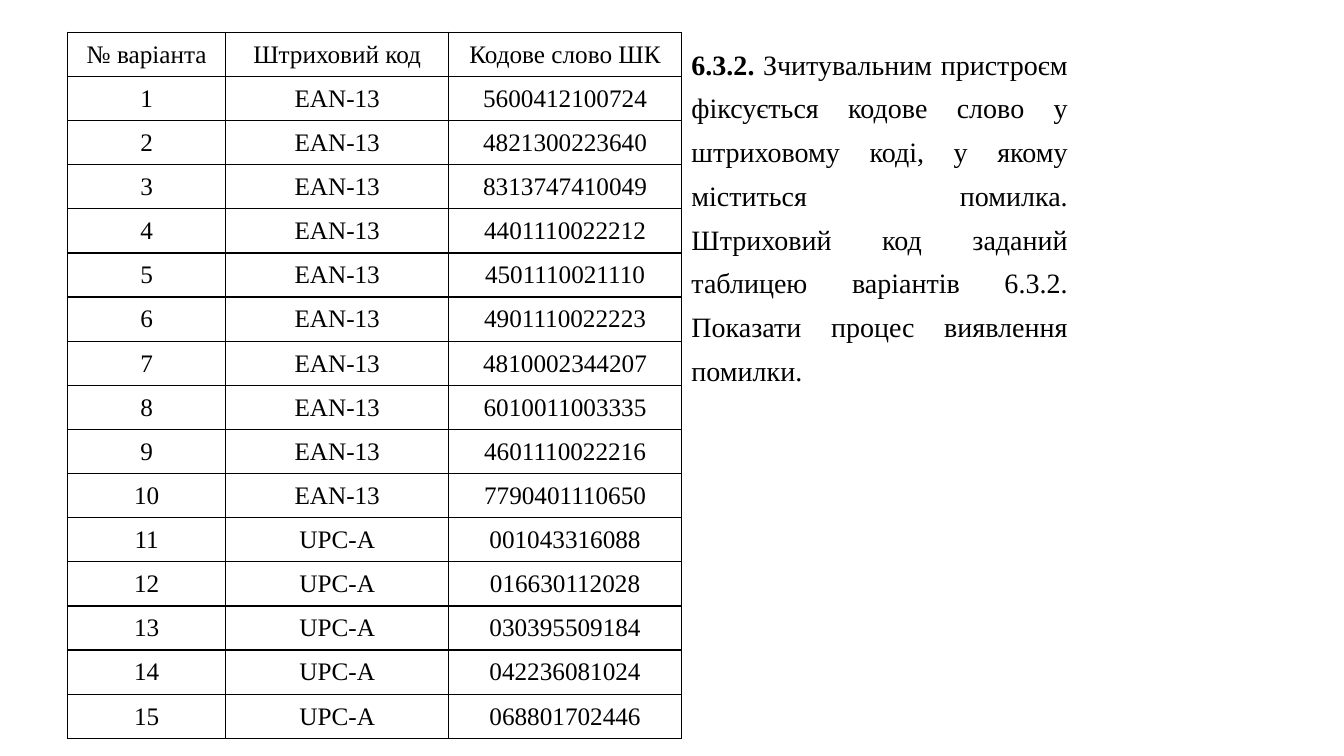
import pptx
import pptx.dml.color
import pptx.enum.text
import pptx.oxml
import pptx.oxml.ns
import pptx.util
from pptx.util import Inches

FONT = "Times New Roman"
BLACK = "000000"
WHITE = "FFFFFF"
ALIGN = pptx.enum.text.PP_ALIGN
HEADERS = ["№ варіанта", "Штриховий код", "Кодове слово ШК"]
CODE_WORDS = {
    "EAN-13": [
        "5600412100724", "4821300223640", "8313747410049", "4401110022212",
        "4501110021110", "4901110022223", "4810002344207", "6010011003335",
        "4601110022216", "7790401110650",
    ],
    "UPC-A": [
        "001043316088", "016630112028", "030395509184", "042236081024",
        "068801702446",
    ],
}
COLUMN_WIDTHS = [1.57, 2.21, 2.31]
ROW_HEIGHT = 7.01 / 16
TASK = (
    "Зчитувальним пристроєм фіксується кодове слово у штриховому коді, "
    "у якому міститься помилка. Штриховий код заданий таблицею варіантів "
    "6.3.2. Показати процес виявлення помилки."
)


def color(value):
    """Return the colour for a hex string."""
    return pptx.dml.color.RGBColor.from_string(value)


def add_text(paragraph, text, size=18, bold=False, align=ALIGN.CENTER, before=0):
    """Append a formatted run to a paragraph."""
    paragraph.alignment = align
    paragraph.line_spacing = 1.3
    paragraph.space_before = pptx.util.Pt(before)
    run = paragraph.add_run()
    run.text = text
    run.font.name = FONT
    run.font.size = pptx.util.Pt(size)
    run.font.bold = bold
    run.font.color.rgb = color(BLACK)


def set_borders(cell, value=BLACK, width=1):
    """Draw a solid border on all four sides of a cell."""
    properties = cell._tc.get_or_add_tcPr()
    for position, side in enumerate(("lnL", "lnR", "lnT", "lnB")):
        border = pptx.oxml.parse_xml(
            f'<a:{side} {pptx.oxml.ns.nsdecls("a")} w="{pptx.util.Pt(width)}">'
            f'<a:solidFill><a:srgbClr val="{value}"/></a:solidFill></a:{side}>'
        )
        properties.insert(position, border)


def add_variants_table(slide, rows):
    """Add the bordered table of variants."""
    table = slide.shapes.add_table(
        len(rows), len(COLUMN_WIDTHS), Inches(0.67), Inches(0.32),
        Inches(sum(COLUMN_WIDTHS)), Inches(ROW_HEIGHT * len(rows)),
    ).table
    table.first_row = False
    table.horz_banding = False
    for column, width in zip(table.columns, COLUMN_WIDTHS):
        column.width = Inches(width)
    for row, values in zip(table.rows, rows):
        row.height = Inches(ROW_HEIGHT)
        for cell, value in zip(row.cells, values):
            cell.margin_left = cell.margin_right = Inches(0.07)
            cell.margin_top = cell.margin_bottom = 0
            cell.fill.solid()
            cell.fill.fore_color.rgb = color(WHITE)
            set_borders(cell)
            add_text(cell.text_frame.paragraphs[0], value, before=2)


def add_task(slide):
    """Add the justified task statement."""
    box = slide.shapes.add_textbox(
        Inches(6.76), Inches(0.32), Inches(3.93), Inches(3.56)
    )
    frame = box.text_frame
    frame.word_wrap = True
    frame.auto_size = pptx.enum.text.MSO_AUTO_SIZE.SHAPE_TO_FIT_TEXT
    paragraph = frame.paragraphs[0]
    add_text(paragraph, "6.3.2. ", size=20, bold=True, align=ALIGN.JUSTIFY)
    add_text(paragraph, TASK, size=20, align=ALIGN.JUSTIFY)


def main():
    """Build and save the slide."""
    presentation = pptx.Presentation()
    presentation.slide_width = Inches(13.33)
    presentation.slide_height = Inches(7.5)
    slide = presentation.slides.add_slide(presentation.slide_layouts[6])
    variants = [(kind, word) for kind, words in CODE_WORDS.items() for word in words]
    rows = [HEADERS]
    for number, (kind, word) in enumerate(variants, start=1):
        rows.append([str(number), kind, word])
    add_variants_table(slide, rows)
    add_task(slide)
    presentation.save("out.pptx")


if __name__ == "__main__":
    main()
